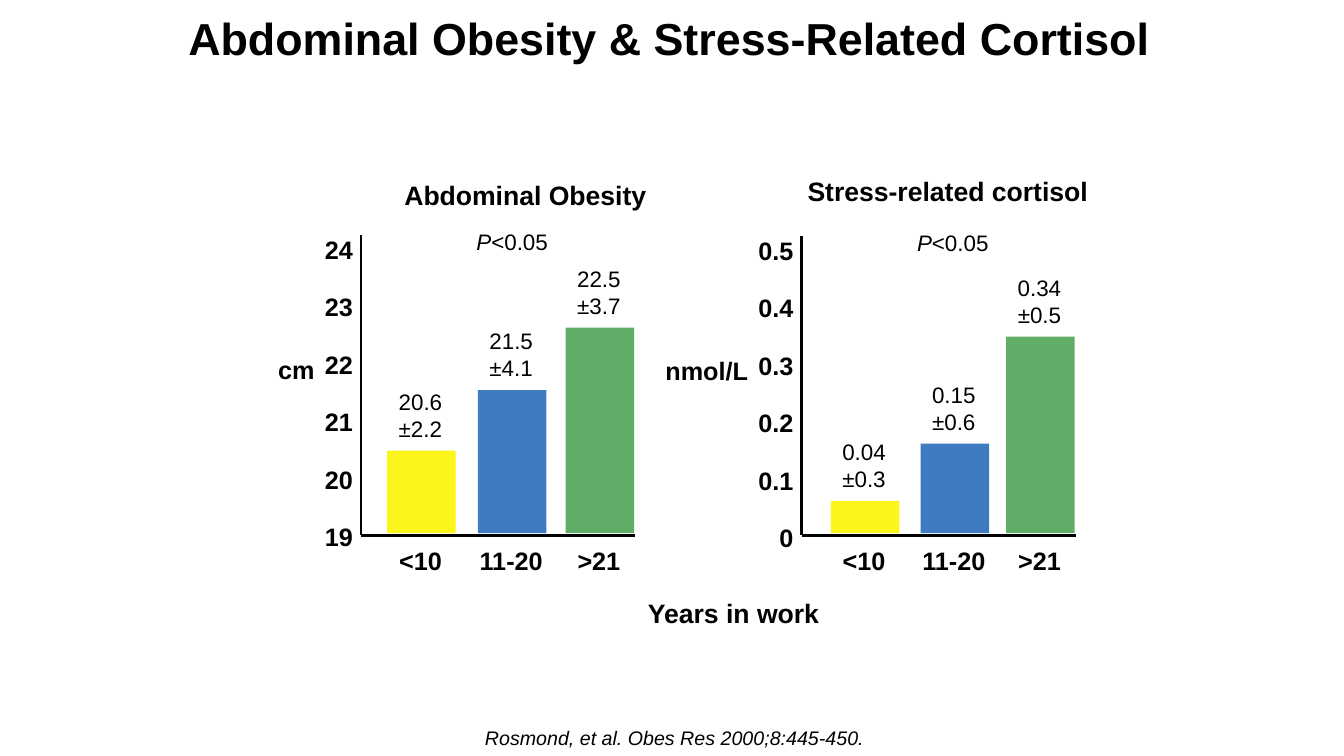
from pptx import Presentation, util as u
from pptx.dml.color import RGBColor
from pptx.enum import shapes, text
from pptx.oxml.ns import qn
from lxml import etree

BLACK, YELLOW, BLUE, GREEN = "000000", "FCF519", "3E7BC1", "61AD68"
LEFT, CENTER, RIGHT = text.PP_ALIGN.LEFT, text.PP_ALIGN.CENTER, text.PP_ALIGN.RIGHT
YEARS = [("<10", 0.48, YELLOW), ("11-20", 0.68, BLUE), (">21", 0.48, GREEN)]
BAR_WIDTH = 0.68
TICK_STEP = 0.57


def color(code):
    """Turn a hex string into a colour."""
    return RGBColor.from_string(code)


def write(page, box, words, size=18, bold=False, italic=False, lead="",
          align=CENTER, spacing=None, inset=0, anchor=text.MSO_ANCHOR.TOP, wrap=False):
    """Place text in a box, one paragraph a line, after an optional italic lead."""
    frame = page.shapes.add_textbox(*map(u.Inches, box)).text_frame
    frame.word_wrap = wrap
    if not wrap:
        frame.auto_size = text.MSO_AUTO_SIZE.SHAPE_TO_FIT_TEXT
    frame.vertical_anchor = anchor
    frame.margin_left = frame.margin_right = u.Inches(inset)
    frame.margin_top = frame.margin_bottom = u.Inches(inset)
    for number, line in enumerate(words.split("\n")):
        para = frame.add_paragraph() if number else frame.paragraphs[0]
        para.alignment = align
        if spacing:
            para.line_spacing = u.Pt(spacing)
        for part, slanted in ((lead, True), (line, italic)):
            if part:
                span = para.add_run()
                span.text = part
                span.font.name = "Arial"
                span.font.size = u.Pt(size)
                span.font.bold = bold
                span.font.italic = slanted
                span.font.color.rgb = color(BLACK)


def label(page, box, words, **style):
    """Write a bold label on a fixed line height."""
    write(page, box, words, **{"bold": True, "spacing": 21, "inset": 0.02, **style})


def draw_line(page, start, end):
    """Draw one axis line."""
    line = page.shapes.add_connector(
        shapes.MSO_CONNECTOR.STRAIGHT, *map(u.Inches, start + end))
    line.line.color.rgb = color(BLACK)
    line.line.width = u.Pt(2)
    etree.SubElement(line._element.spPr, qn("a:effectLst"))


def draw_bar(page, box, fill):
    """Draw one plain bar."""
    bar = page.shapes.add_shape(shapes.MSO_SHAPE.RECTANGLE, *map(u.Inches, box))
    bar.shadow.inherit = False
    bar.fill.solid()
    bar.fill.fore_color.rgb = color(fill)
    bar.line.fill.background()


def draw_panel(page, box, title, unit, ticks, tick_width, bars):
    """Draw a bar panel whose plot area fills the box."""
    left, top, width, height = box
    base = top + height
    heading, heading_center, heading_width, heading_rise = title
    write(page, (left + heading_center - heading_width / 2, top - heading_rise,
                 heading_width, 0.32), heading, size=19, bold=True)
    write(page, (left + 1.08, top - 0.07, 0.84, 0.27), "<0.05", lead="P", size=16)

    unit_name, unit_center, unit_width = unit
    label(page, (left - unit_center - unit_width / 2, top + 1.17, unit_width, 0.35),
          unit_name)
    for step, tick in enumerate(ticks):
        label(page, (left - 0.06 - tick_width, top - 0.02 + step * TICK_STEP,
                     tick_width, 0.35), tick, align=RIGHT)

    for (years, label_width, fill), (offset, bar_height, value) in zip(YEARS, bars):
        bar_left, bar_top = left + offset, base - 0.02 - bar_height
        middle = bar_left + BAR_WIDTH / 2
        draw_bar(page, (bar_left, bar_top, BAR_WIDTH, bar_height), fill)
        write(page, (middle - 0.29, bar_top - 0.62, 0.56, 0.54), value, size=16)
        label(page, (middle - 0.01 - label_width / 2, base + 0.09, label_width, 0.35),
              years)

    draw_line(page, (left, top), (left, base))
    draw_line(page, (left, base), (left + width, base))


def draw_slide(page):
    """Place the title, both panels, the shared axis title and the citation."""
    write(page, (1.64, 0.07, 10, 0.61), "Abdominal Obesity & Stress-Related Cortisol",
          size=32, bold=True, anchor=text.MSO_ANCHOR.MIDDLE, wrap=True)
    draw_panel(page, (3.58, 2.33, 2.72, 2.98), ("Abdominal Obesity", 1.63, 2.55, 0.56),
               ("cm", 0.64, 0.41), ["24", "23", "22", "21", "20", "19"], 0.33,
               [(0.26, 0.82, "20.6\n±2.2"), (1.16, 1.42, "21.5\n±4.1"),
                (2.03, 2.04, "22.5\n±3.7")])
    draw_panel(page, (7.95, 2.34, 2.72, 2.97),
               ("Stress-related cortisol", 1.45, 2.94, 0.6),
               ("nmol/L", 0.94, 0.88), ["0.5", "0.4", "0.3", "0.2", "0.1", "0"], 0.4,
               [(0.29, 0.32, "0.04\n±0.3"), (1.18, 0.89, "0.15\n±0.6"),
                (2.03, 1.95, "0.34\n±0.5")])
    label(page, (6.39, 5.92, 1.77, 0.35), "Years in work", size=19, inset=0.03)
    write(page, (4.8, 7.22, 3.82, 0.24), "Rosmond, et al. Obes Res 2000;8:445-450.",
          size=14, italic=True, align=LEFT, spacing=15, inset=0.01)


def main():
    """Build and save the deck."""
    deck = Presentation()
    deck.slide_width, deck.slide_height = u.Inches(13.33), u.Inches(7.5)
    draw_slide(deck.slides.add_slide(deck.slide_layouts[6]))
    deck.save("out.pptx")


if __name__ == "__main__":
    main()
